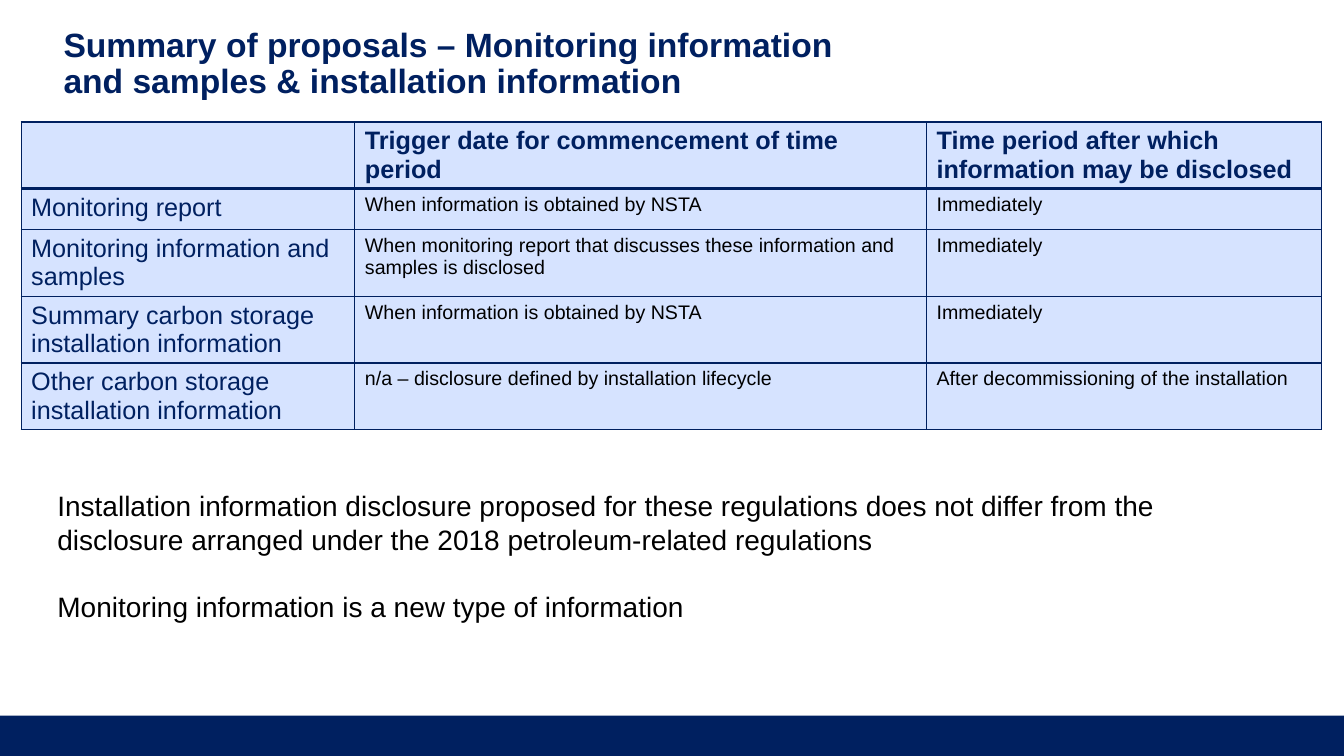
from pptx import Presentation
from pptx import util as u
from pptx.dml.color import RGBColor
from pptx.enum import shapes, text
from pptx.oxml import parse_xml
from pptx.oxml.ns import nsdecls

COLOURS = {"navy": "002060", "pale": "D6E3FF", "black": "000000"}
FONT = "Arial"
TITLE = "Summary of proposals – Monitoring information and samples & installation information"
COLUMN_WIDTHS = [3.31, 5.67, 3.92]
ROW_HEIGHTS = [0.66, 0.41, 0.66, 0.66, 0.66]
PROPOSALS = [
    ["", "Trigger date for commencement of time period",
     "Time period after which information may be disclosed"],
    ["Monitoring report", "When information is obtained by NSTA", "Immediately"],
    ["Monitoring information and samples",
     "When monitoring report that discusses these information and samples is disclosed",
     "Immediately"],
    ["Summary carbon storage installation information",
     "When information is obtained by NSTA", "Immediately"],
    ["Other carbon storage installation information",
     "n/a – disclosure defined by installation lifecycle",
     "After decommissioning of the installation"],
]
NOTES = [
    "Installation information disclosure proposed for these regulations does not differ "
    "from the disclosure arranged under the 2018 petroleum-related regulations",
    "Monitoring information is a new type of information",
]


def colour(name):
    return RGBColor.from_string(COLOURS[name])


def style_font(paragraph, size, colour_name, bold=False):
    font = paragraph.font
    font.name = FONT
    font.size = u.Pt(size)
    font.bold = bold
    font.color.rgb = colour(colour_name)


def place(shape, left, top, width, height):
    shape.left, shape.top = u.Inches(left), u.Inches(top)
    shape.width, shape.height = u.Inches(width), u.Inches(height)


def add_footer_bar(slide):
    bar = slide.shapes.add_shape(
        shapes.MSO_SHAPE.RECTANGLE,
        u.Inches(0), u.Inches(7.1), u.Inches(13.33), u.Inches(0.4))
    bar.shadow.inherit = False
    bar.fill.solid()
    bar.fill.fore_color.rgb = colour("navy")
    bar.line.fill.background()


def set_title(slide):
    title = slide.shapes.title
    place(title, 0.63, 0.28, 8.16, 0.55)
    frame = title.text_frame
    frame.text = TITLE
    frame.word_wrap = True
    frame.auto_size = text.MSO_AUTO_SIZE.NONE
    frame.vertical_anchor = text.MSO_ANCHOR.TOP
    frame.margin_left = frame.margin_top = 0
    frame.margin_right, frame.margin_bottom = u.Inches(0.1), u.Inches(0.05)
    paragraph = frame.paragraphs[0]
    paragraph.alignment = text.PP_ALIGN.LEFT
    paragraph.line_spacing = 0.9
    style_font(paragraph, 24, "navy", True)


def set_borders(cell, top, bottom):
    properties = cell._tc.get_or_add_tcPr()
    widths = {"lnL": 1, "lnR": 1, "lnT": top, "lnB": bottom}
    for position, (side, width) in enumerate(widths.items()):
        properties.insert(position, parse_xml(
            f'<a:{side} {nsdecls("a")} w="{u.Pt(width)}"><a:solidFill>'
            f'<a:srgbClr val="{COLOURS["navy"]}"/></a:solidFill></a:{side}>'))


def fill_cell(cell, wording, row, column):
    cell.text = wording
    cell.fill.solid()
    cell.fill.fore_color.rgb = colour("pale")
    is_heading = row == 0 or column == 0
    style_font(cell.text_frame.paragraphs[0], 18 if is_heading else 14,
               "navy" if is_heading else "black", row == 0)
    set_borders(cell, 3 if row == 1 else 1, 3 if row == 0 else 1)


def add_proposals_table(slide):
    table = slide.shapes.add_table(
        len(PROPOSALS), len(COLUMN_WIDTHS), u.Inches(0.21), u.Inches(1.21),
        u.Inches(sum(COLUMN_WIDTHS)), u.Inches(sum(ROW_HEIGHTS))).table
    table.horz_banding = False
    for column, width in zip(table.columns, COLUMN_WIDTHS):
        column.width = u.Inches(width)
    for row, height in zip(table.rows, ROW_HEIGHTS):
        row.height = u.Inches(height)
    for row, entries in enumerate(PROPOSALS):
        for column, wording in enumerate(entries):
            fill_cell(table.cell(row, column), wording, row, column)


def add_notes_box(slide):
    box = slide.shapes.add_textbox(
        u.Inches(0.47), u.Inches(4.8), u.Inches(11.88), u.Inches(1.45))
    frame = box.text_frame
    frame.word_wrap = True
    for index, wording in enumerate(NOTES):
        paragraph = frame.add_paragraph() if index else frame.paragraphs[0]
        paragraph.text = wording
        style_font(paragraph, 20, "black")
        if index:
            paragraph.space_before = u.Pt(24)


def main():
    presentation = Presentation()
    presentation.slide_width = u.Inches(13.33)
    presentation.slide_height = u.Inches(7.5)
    slide = presentation.slides.add_slide(presentation.slide_layouts[5])
    add_footer_bar(slide)
    set_title(slide)
    add_proposals_table(slide)
    add_notes_box(slide)
    presentation.save("out.pptx")


if __name__ == "__main__":
    main()
